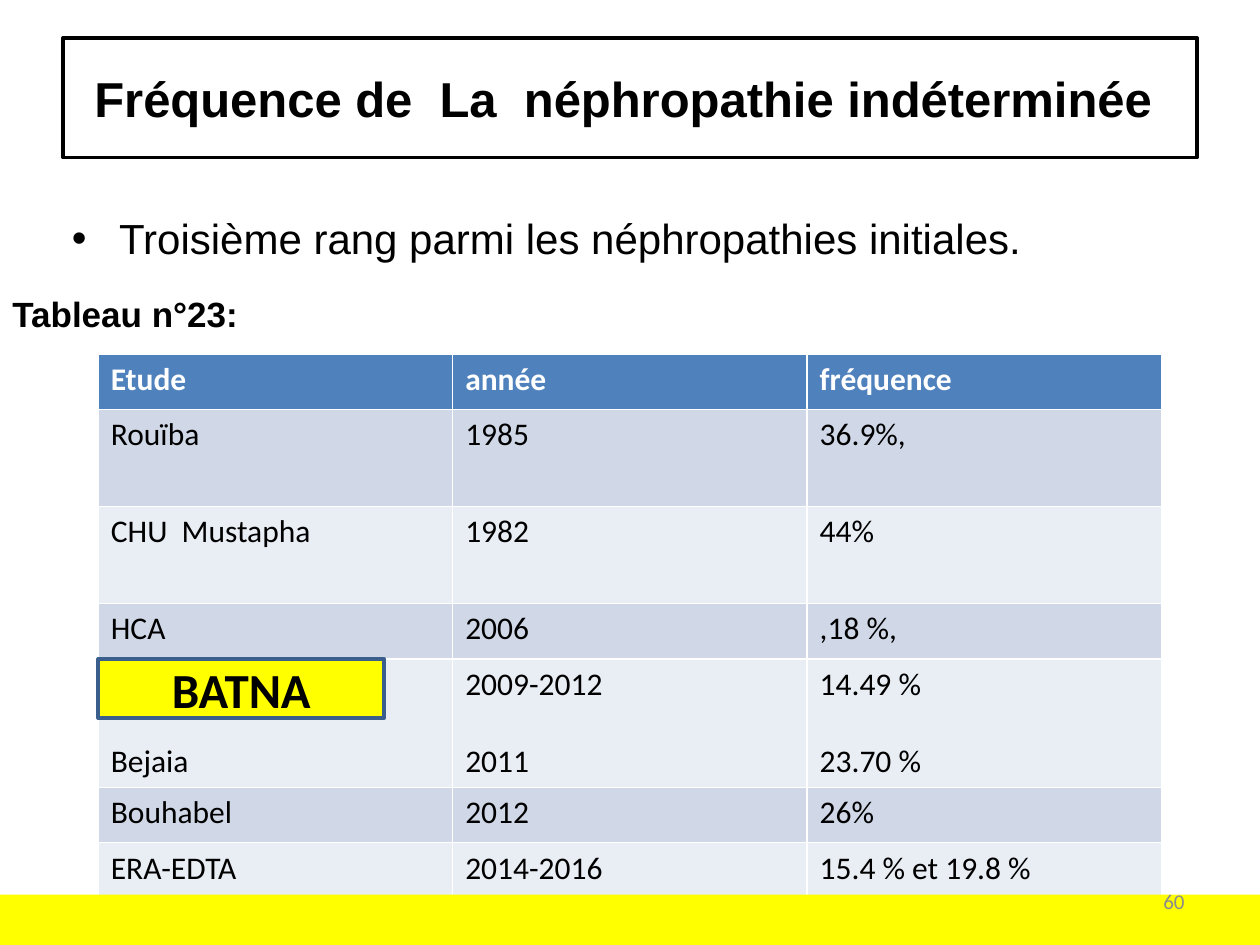
"""Build the slide on how frequent indeterminate nephropathy is."""
import pptx
import pptx.util
import pptx.dml.color
import pptx.enum.shapes
import pptx.enum.text

Inches = pptx.util.Inches
Pt = pptx.util.Pt
Align = pptx.enum.text.PP_ALIGN
Anchor = pptx.enum.text.MSO_ANCHOR
Rgb = pptx.dml.color.RGBColor.from_string


class Theme:
    black, white, yellow, grey = map(Rgb, ("000000", "FFFFFF", "FFFF00", "8C8C8C"))
    head, edge = Rgb("4F81BD"), Rgb("3A5F8C")
    bands = Rgb("E9EDF4"), Rgb("D0D8E8")
    sans, plain = "Arial", "Calibri"
    big, list, label, cell, small = map(Pt, (28, 24, 20, 18, 12))


def write(frame, text, size, font=Theme.plain, color=Theme.black, bold=False,
          align=None, anchor=Anchor.TOP, gap=None):
    frame.word_wrap = True
    frame.auto_size = pptx.enum.text.MSO_AUTO_SIZE.NONE
    frame.vertical_anchor = anchor
    fill(frame.paragraphs, frame, text, size, font, color, bold, align, gap)


def fill(paras, frame, text, size, font, color, bold, align, gap):
    for i, line in enumerate(text.split("\n")):
        para = frame.add_paragraph() if i else paras[0]
        para.alignment = align
        if i and gap:
            para.space_before = gap
        run = para.add_run()
        run.text = line
        run.font.size, run.font.name, run.font.bold = size, font, bold
        run.font.color.rgb = color


deck = pptx.Presentation()
deck.slide_width, deck.slide_height = Inches(10), Inches(7.5)
slide = deck.slides.add_slide(deck.slide_layouts[1])
shapes = slide.shapes

title = shapes.title
title.left, title.top, title.width, title.height = map(Inches, (0.5, 0.3, 9, 0.95))
title.fill.solid()
title.fill.fore_color.rgb = Theme.white
title.line.color.rgb = Theme.black
title.line.width = Pt(2)
write(title.text_frame, "Fréquence de  La  néphropathie indéterminée ", Theme.big,
      font=Theme.sans, bold=True, align=Align.CENTER, anchor=Anchor.MIDDLE)

body = slide.placeholders[1]
body.left, body.top, body.width, body.height = map(Inches, (0.47, 1.64, 9, 0.6))
write(body.text_frame, "Troisième rang parmi les néphropathies initiales.",
      Theme.list, font=Theme.sans)

rows = [
    (0.44, "Etude", "année", "fréquence"),
    (0.77, "Rouïba", "1985", "36.9%,"),
    (0.77, "CHU  Mustapha", "1982", "44%"),
    (0.44, "HCA", "2006", ",18 %,"),
    (1.02, "Batna\nBejaia", "2009-2012\n2011", "14.49 %\n23.70 %"),
    (0.44, "Bouhabel", "2012", "26%"),
    (0.44, "ERA-EDTA", "2014-2016", "15.4 % et 19.8 %"),
]
high = sum(row[0] for row in rows)
table = shapes.add_table(len(rows), 3, Inches(0.78), Inches(2.81),
                         Inches(8.44), Inches(high)).table
for r, (tall, *words) in enumerate(rows):
    table.rows[r].height = Inches(tall)
    for c, word in enumerate(words):
        cell = table.cell(r, c)
        cell.fill.solid()
        cell.fill.fore_color.rgb = Theme.bands[r % 2] if r else Theme.head
        write(cell.text_frame, word, Theme.cell, bold=r == 0, gap=Pt(22),
              color=Theme.black if r else Theme.white)

boxes = []
for spot in ((0.78, 5.23, 2.27, 0.47), (0, 7.1, 10, 0.4)):
    box = shapes.add_shape(pptx.enum.shapes.MSO_SHAPE.RECTANGLE, *map(Inches, spot))
    box.shadow.inherit = False
    box.fill.solid()
    box.fill.fore_color.rgb = Theme.yellow
    boxes.append(box)
batna, band = boxes
batna.line.color.rgb = Theme.edge
batna.line.width = Pt(2)
band.line.fill.background()
write(batna.text_frame, "BATNA", Theme.big, bold=True, align=Align.CENTER,
      anchor=Anchor.MIDDLE)

label = shapes.add_textbox(*map(Inches, (0, 2.27, 10, 0.5)))
write(label.text_frame, "Tableau n°23:", Theme.label, font=Theme.sans, bold=True)

page = shapes.add_textbox(*map(Inches, (7.17, 6.95, 2.33, 0.4)))
write(page.text_frame, "60", Theme.small, color=Theme.grey, align=Align.RIGHT,
      anchor=Anchor.MIDDLE)

deck.save("out.pptx")
